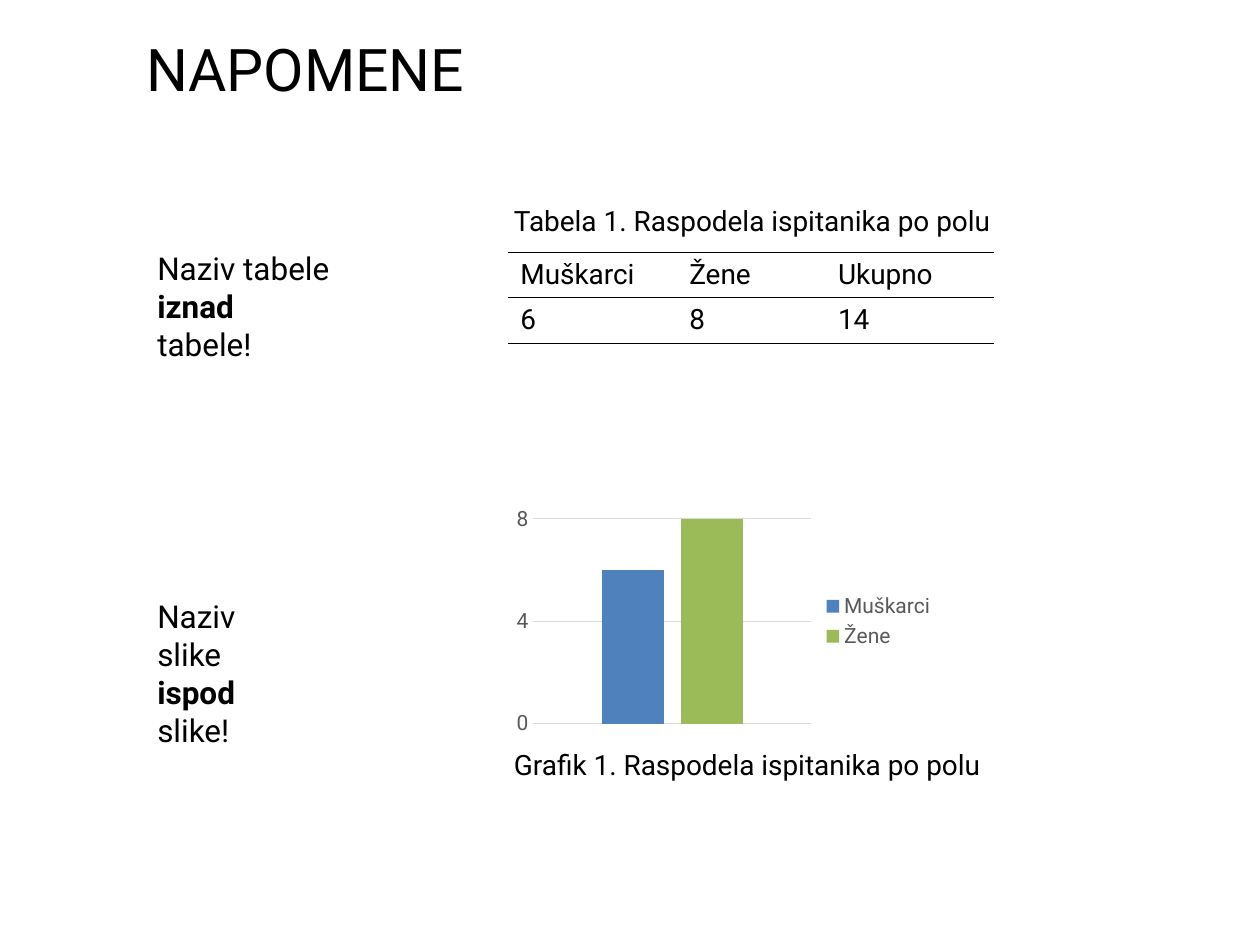
from dataclasses import dataclass

from lxml import etree
from pptx import Presentation
from pptx.chart.data import CategoryChartData
from pptx.dml.color import RGBColor
from pptx.enum.chart import XL_CHART_TYPE, XL_LEGEND_POSITION, XL_TICK_MARK
from pptx.enum.text import MSO_ANCHOR, PP_ALIGN
from pptx.oxml import parse_xml
from pptx.oxml.ns import nsdecls, qn
from pptx.slide import Slide
from pptx.table import _Cell
from pptx.util import Pt

CLUSTERED = XL_CHART_TYPE.COLUMN_CLUSTERED
LEGEND_RIGHT = XL_LEGEND_POSITION.RIGHT
NO_TICK = XL_TICK_MARK.NONE
LEFT = PP_ALIGN.LEFT
MIDDLE = MSO_ANCHOR.MIDDLE

BLACK = RGBColor(0x00, 0x00, 0x00)
GRAY = RGBColor(0x59, 0x59, 0x59)
GRID = RGBColor(0xD9, 0xD9, 0xD9)
BLUE = RGBColor(0x4F, 0x81, 0xBD)
GREEN = RGBColor(0x9B, 0xBB, 0x59)
FONT = "Roboto"
TITLE_ONLY = 5

NOTE_LEFT, CAPTION_LEFT, FIGURE_LEFT = 82.8, 286.6, 290.2
COLUMN_WIDTHS = (96.5, 85, 96.5)
ROW_HEIGHT = 26


@dataclass(frozen=True)
class Label:
    """Paragraphs of (text, bold) runs in a box measured in points."""
    left: float
    top: float
    width: float
    height: float
    size: float
    paragraphs: tuple[tuple[tuple[str, bool], ...], ...]


@dataclass(frozen=True)
class Group:
    name: str
    count: int
    color: RGBColor


GROUPS = (Group("Muškarci", 6, BLUE), Group("Žene", 8, GREEN))

LABELS = (
    Label(NOTE_LEFT, 139, 113.8, 51, 18,
          ((("Naziv tabele", False),), (("iznad", True), (" tabele!", False)))),
    Label(CAPTION_LEFT, 113, 351.4, 26.6, 16,
          ((("Tabela 1. Raspodela ispitanika po polu", False),),)),
    Label(CAPTION_LEFT, 423.4, 351.4, 26.6, 16,
          ((("Grafik 1. Raspodela ispitanika po polu", False),),)),
    Label(NOTE_LEFT, 337.7, 94, 51, 18,
          ((("Naziv slike", False),), (("ispod ", True), ("slike!", False)))),
)


def style_font(font, size: float, color: RGBColor = BLACK) -> None:
    font.name = FONT
    font.size = Pt(size)
    font.color.rgb = color


def add_title(slide: Slide) -> None:
    title = slide.shapes.title
    title.left, title.top = Pt(76.3), Pt(9.4)
    title.width, title.height = Pt(617.8), Pt(51.8)
    frame = title.text_frame
    frame.text = "napomene"
    frame.vertical_anchor = MIDDLE
    paragraph = frame.paragraphs[0]
    paragraph.alignment = LEFT
    font = paragraph.runs[0].font
    style_font(font, 42)
    paragraph.runs[0]._r.get_or_add_rPr().set("cap", "small")


def add_label(slide: Slide, label: Label) -> None:
    box = slide.shapes.add_textbox(
        Pt(label.left), Pt(label.top), Pt(label.width), Pt(label.height))
    frame = box.text_frame
    frame.word_wrap = True
    for index, pieces in enumerate(label.paragraphs):
        paragraph = frame.add_paragraph() if index else frame.paragraphs[0]
        for text, bold in pieces:
            run = paragraph.add_run()
            run.text = text
            style_font(run.font, label.size)
            run.font.bold = bold


def rule_cell(cell: _Cell) -> None:
    """Draw thin lines above and below the cell, none at its sides."""
    black_fill = f'<a:solidFill><a:srgbClr val="{BLACK}"/></a:solidFill>'
    properties = cell._tc.get_or_add_tcPr()
    sides = (("lnL", "<a:noFill/>"), ("lnR", "<a:noFill/>"),
             ("lnT", black_fill), ("lnB", black_fill))
    for position, (side, fill) in enumerate(sides):
        line = parse_xml(
            f'<a:{side} {nsdecls("a")} w="{Pt(0.5)}">{fill}</a:{side}>')
        properties.insert(position, line)


def add_count_table(slide: Slide) -> None:
    total = sum(group.count for group in GROUPS)
    rows = ([group.name for group in GROUPS] + ["Ukupno"],
            [str(group.count) for group in GROUPS] + [str(total)])
    table = slide.shapes.add_table(
        len(rows), len(COLUMN_WIDTHS), Pt(FIGURE_LEFT), Pt(144),
        Pt(sum(COLUMN_WIDTHS)), Pt(ROW_HEIGHT * len(rows))).table
    table.first_row = table.horz_banding = False
    for column, width in zip(table.columns, COLUMN_WIDTHS):
        column.width = Pt(width)
    for row, texts in zip(table.rows, rows):
        row.height = Pt(ROW_HEIGHT)
        for cell, text in zip(row.cells, texts):
            cell.text = text
            style_font(cell.text_frame.paragraphs[0].runs[0].font, 16)
            cell.fill.background()
            rule_cell(cell)


def add_count_chart(slide: Slide) -> None:
    data = CategoryChartData()
    data.categories = ["1"]
    for group in GROUPS:
        data.add_series(group.name, [group.count])
    chart = slide.shapes.add_chart(
        CLUSTERED, Pt(FIGURE_LEFT), Pt(286.6), Pt(251.3), Pt(136.8), data).chart
    style_font(chart.font, 12, GRAY)
    chart.has_title = False
    chart.has_legend = True
    chart.legend.position = LEGEND_RIGHT
    chart.legend.include_in_layout = False
    style_font(chart.legend.font, 12, GRAY)

    chart.category_axis.visible = False
    counts = chart.value_axis
    counts.minimum_scale, counts.maximum_scale, counts.major_unit = 0, 8, 4
    counts.major_tick_mark = counts.minor_tick_mark = NO_TICK
    counts.format.line.fill.background()
    style_font(counts.tick_labels.font, 12, GRAY)
    gridline = counts.major_gridlines.format.line
    gridline.color.rgb = GRID
    gridline.width = Pt(0.75)

    plot = chart.plots[0]
    plot.vary_by_categories = False
    plot.gap_width, plot.overlap = 219, -27
    for series, group in zip(plot.series, GROUPS):
        series.format.fill.solid()
        series.format.fill.fore_color.rgb = group.color


def main() -> None:
    presentation = Presentation()
    presentation.slide_width, presentation.slide_height = Pt(720), Pt(540)
    slide = presentation.slides.add_slide(presentation.slide_layouts[TITLE_ONLY])
    add_title(slide)
    add_count_table(slide)
    add_count_chart(slide)
    for label in LABELS:
        add_label(slide, label)
    presentation.save("out.pptx")


if __name__ == "__main__":
    main()
